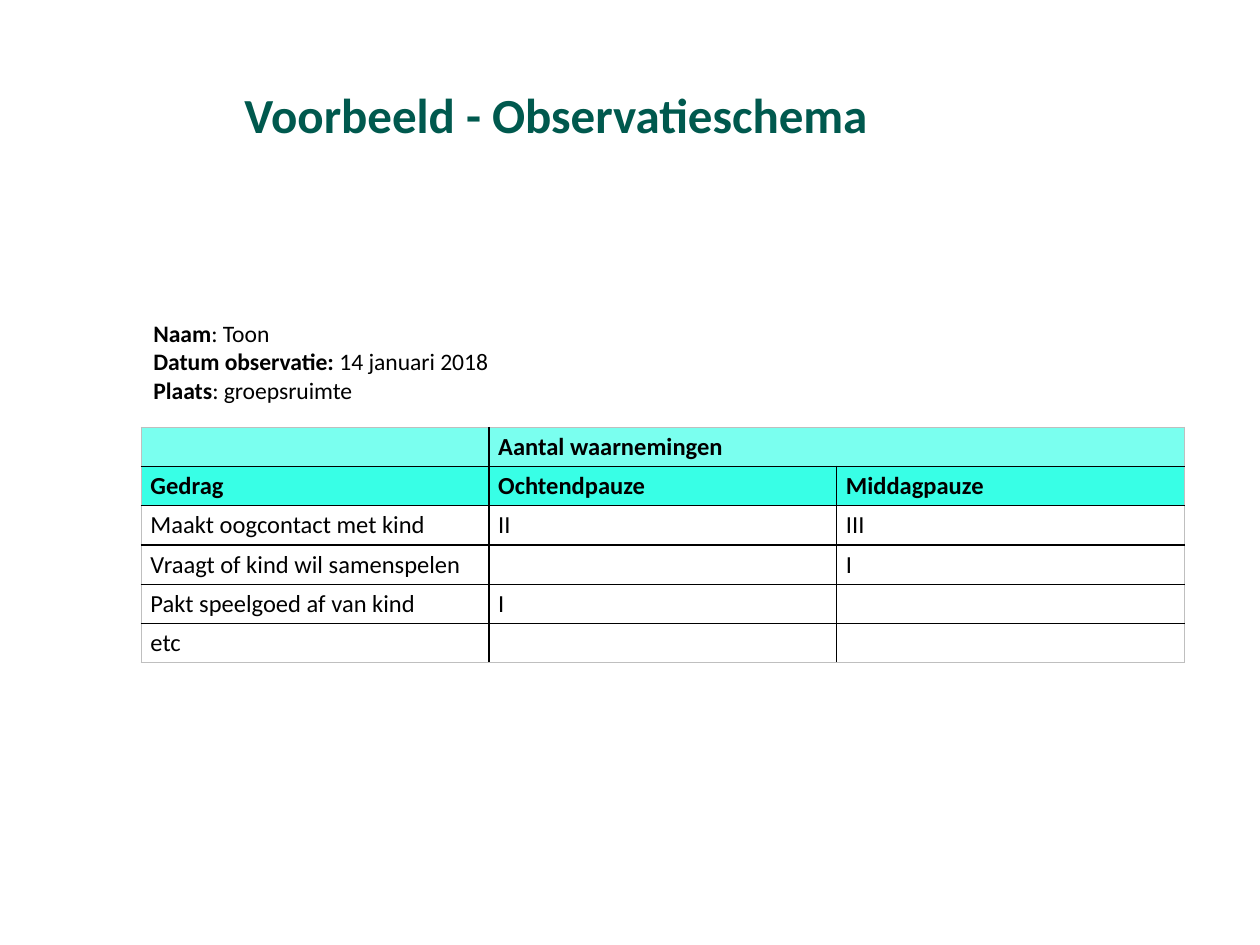
import pptx
import pptx.util
import pptx.dml.color
import pptx.enum.text
import pptx.oxml
import pptx.oxml.ns

Pt = pptx.util.Pt
RGBColor = pptx.dml.color.RGBColor
BLACK = RGBColor(0x00, 0x00, 0x00)
GREEN = RGBColor(0x00, 0x59, 0x4E)
LIGHT_AQUA = RGBColor(0x7A, 0xFF, 0xEF)
AQUA = RGBColor(0x38, 0xFF, 0xE6)
GREY = RGBColor(0xBF, 0xBF, 0xBF)

DETAILS = [
    ("Naam", ": Toon"),
    ("Datum observatie: ", "14 januari 2018"),
    ("Plaats", ": groepsruimte"),
]
OBSERVATIONS = [
    ("", "Aantal waarnemingen", ""),
    ("Gedrag", "Ochtendpauze", "Middagpauze"),
    ("Maakt oogcontact met kind", "II", "III"),
    ("Vraagt of kind wil samenspelen", "", "I"),
    ("Pakt speelgoed af van kind", "I", ""),
    ("etc", "", ""),
]
HEADER_FILLS = [LIGHT_AQUA, AQUA]


class SlideBuilder:
    """Holds the text style and the slide being built."""

    def __init__(self, page, typeface="Calibri"):
        self.page = page
        self.typeface = typeface

    def style(self, font, size, color=BLACK, bold=None):
        font.name = self.typeface
        font.size = Pt(size)
        font.color.rgb = color
        font.bold = bold

    def place(self, shape, left, top, width, height):
        shape.left, shape.top = Pt(left), Pt(top)
        shape.width, shape.height = Pt(width), Pt(height)

    def title(self, text, bounds):
        title = self.page.shapes.title
        self.place(title, *bounds)
        frame = title.text_frame
        frame.text = text
        frame.vertical_anchor = pptx.enum.text.MSO_ANCHOR.BOTTOM
        para = frame.paragraphs[0]
        para.alignment = pptx.enum.text.PP_ALIGN.LEFT
        self.style(para.font, 28, GREEN, True)

    def details(self, lines, bounds):
        box = self.page.shapes.add_textbox(*map(Pt, bounds))
        frame = box.text_frame
        frame.word_wrap = True
        for index, (label, value) in enumerate(lines):
            para = frame.add_paragraph() if index else frame.paragraphs[0]
            self.style(para.font, 13.5)
            for text, bold in ((label, True), (value, False)):
                span = para.add_run()
                span.text = text
                span.font.bold = bold

    def borders(self, cell, sides):
        properties = cell._tc.get_or_add_tcPr()
        for index, (side, outer) in enumerate(sides.items()):
            width, color = (Pt(0.5), GREY) if outer else (Pt(1), BLACK)
            line = pptx.oxml.parse_xml(
                f'<a:{side} {pptx.oxml.ns.nsdecls("a")} w="{width}"><a:solidFill>'
                f'<a:srgbClr val="{color}"/></a:solidFill></a:{side}>'
            )
            properties.insert(index, line)

    def table(self, rows, header_fills, bounds):
        last_row, last_column = len(rows) - 1, len(rows[0]) - 1
        frame = self.page.shapes.add_table(len(rows), len(rows[0]), *map(Pt, bounds))
        table = frame.table
        table.first_row = table.horz_banding = False
        for r, texts in enumerate(rows):
            is_header = r < len(header_fills)
            for c, text in enumerate(texts):
                cell = table.cell(r, c)
                cell.margin_left = cell.margin_right = Pt(5.4)
                cell.margin_top = cell.margin_bottom = Pt(2.7)
                if is_header:
                    cell.fill.solid()
                    cell.fill.fore_color.rgb = header_fills[r]
                else:
                    cell.fill.background()
                cell.text = text
                self.style(cell.text_frame.paragraphs[0].font, 14, bold=is_header)
                self.borders(cell, {
                    "lnL": c == 0,
                    "lnR": c == last_column or (r == 0 and c == 1),
                    "lnT": r == 0,
                    "lnB": r == last_row,
                })
        table.cell(0, 1).merge(table.cell(0, last_column))


def main():
    deck = pptx.Presentation()
    deck.slide_width, deck.slide_height = Pt(720), Pt(540)
    page = deck.slides.add_slide(deck.slide_layouts.get_by_name("Title Only"))
    builder = SlideBuilder(page)
    builder.title("Voorbeeld - Observatieschema", (132.5, 18, 550.8, 67.7))
    builder.table(OBSERVATIONS, HEADER_FILLS, (80.6, 244.1, 596.2, 133.2))
    builder.details(DETAILS, (80.6, 178.6, 567.4, 56.2))
    deck.save("out.pptx")


if __name__ == "__main__":
    main()
